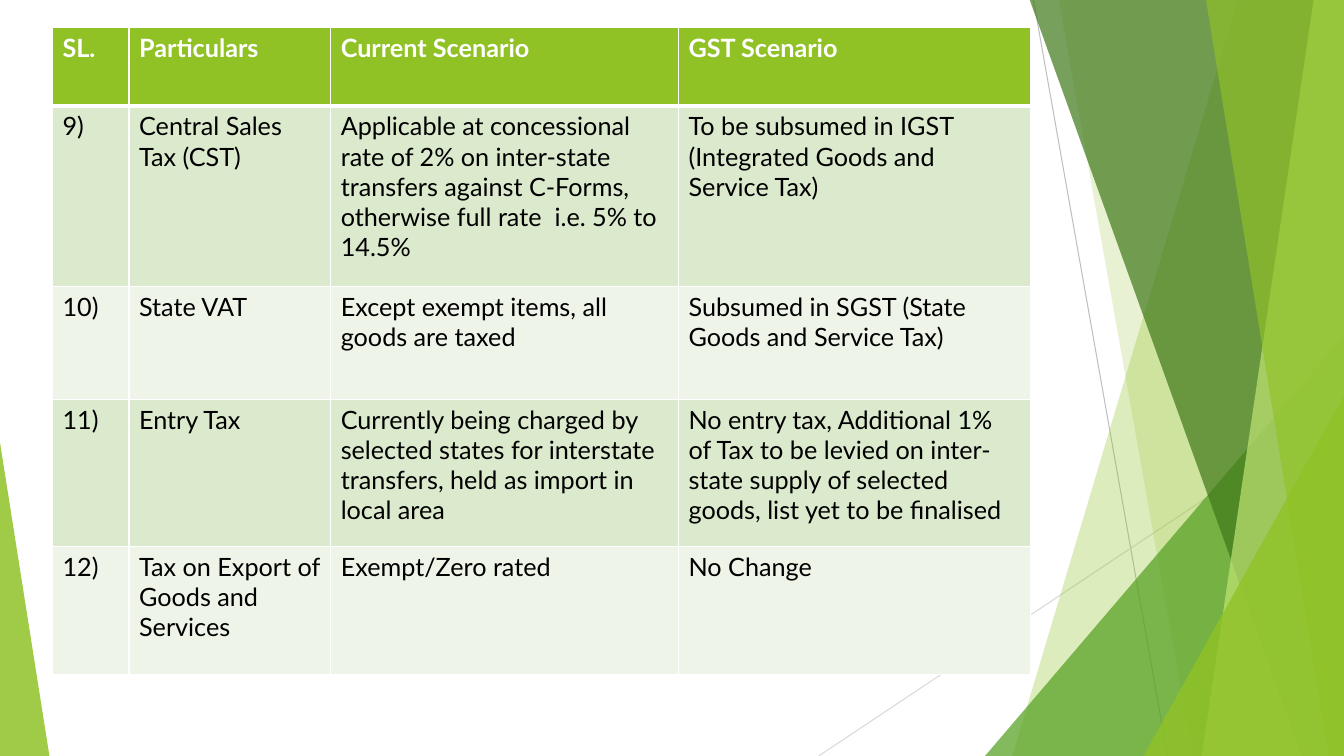
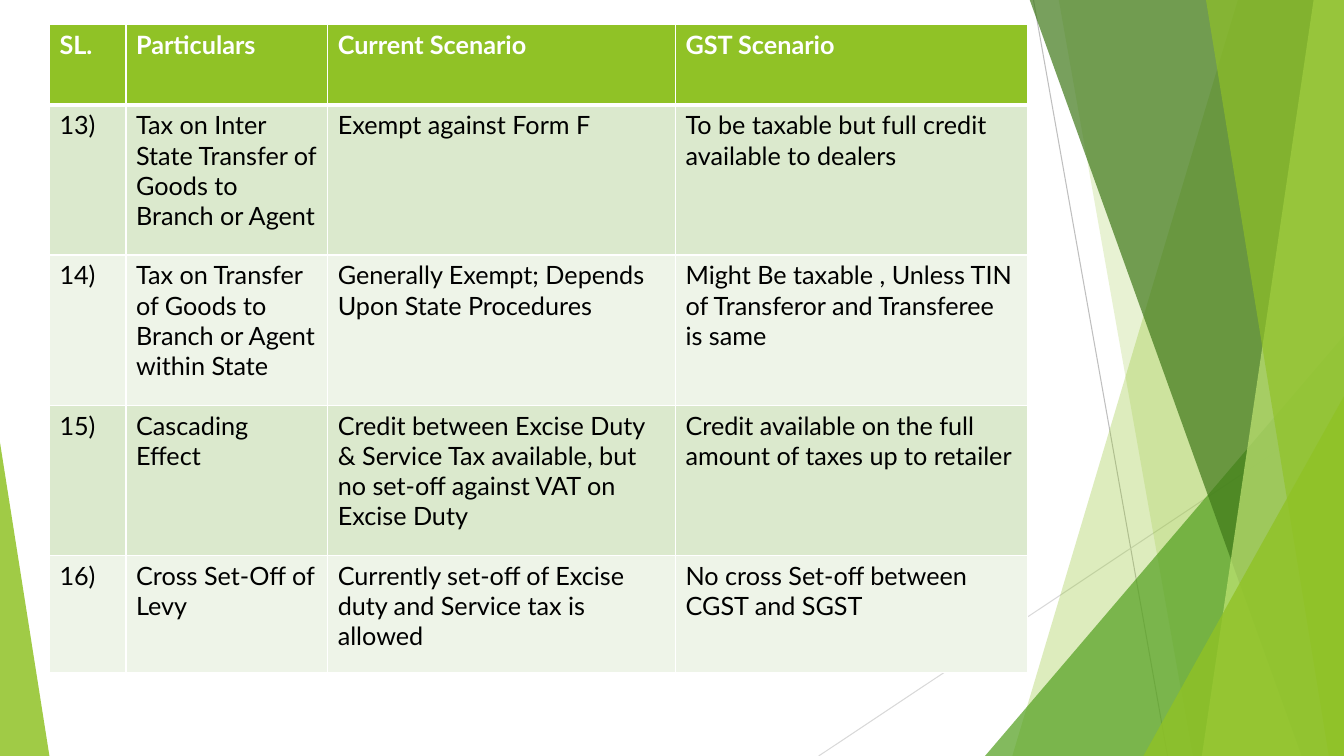
from dataclasses import dataclass

import lxml.etree
import pptx
import pptx.dml.color
import pptx.enum.shapes
import pptx.oxml.ns
import pptx.util

Inches = pptx.util.Inches
qn = pptx.oxml.ns.qn


@dataclass(frozen=True)
class Theme:
    font: str = "Lato"
    text_size: int = 18
    white: str = "FFFFFF"
    text: str = "000000"
    lime: str = "90C226"
    pale_lime: str = "C0E474"
    green: str = "54A021"
    dark_green: str = "3F7819"
    odd_row: str = "DBE9CD"
    even_row: str = "EEF4E8"
    steep_line: str = "BFBFBF"
    flat_line: str = "D9D9D9"
    hairline: float = 0.75
    grid_line: float = 1
    header_rule: float = 3


THEME = Theme()
WIDTH, HEIGHT = 13.33, 7.5
BLEED = -0.01  # bands start just above the slide's top edge

HEADINGS = ["SL.", "Particulars", "Current Scenario", "GST Scenario"]
COLUMN_WIDTHS = [0.76, 2, 3.45, 3.49]

# Per slide: table corner, row heights, rows below the headings
TAX_TABLES = [
    ((0.52, 0.27), [0.78, 1.79, 1.12, 1.46, 1.27], [
        ["9)", "Central Sales Tax (CST)",
         "Applicable at concessional rate of 2% on inter-state transfers "
         "against C-Forms, otherwise full rate  i.e. 5% to 14.5%",
         "To be subsumed in IGST (Integrated Goods and Service Tax)"],
        ["10)", "State VAT", "Except exempt items, all goods are taxed",
         "Subsumed in SGST (State Goods and Service Tax)"],
        ["11)", "Entry Tax",
         "Currently being charged by selected states for interstate "
         "transfers, held as import in local area",
         "No entry tax, Additional 1% of Tax to be levied on inter-state "
         "supply of selected goods, list yet to be finalised"],
        ["12)", "Tax on Export of Goods and Services",
         "Exempt/Zero rated", "No Change"],
    ]),
    ((0.49, 0.24), [0.8, 1.49, 1.49, 1.49, 1.16], [
        ["13)", "Tax on Inter State Transfer of Goods to Branch or Agent",
         "Exempt against Form F",
         "To be taxable but full credit available to dealers"],
        ["14)", "Tax on Transfer of Goods to Branch or Agent within State",
         "Generally Exempt; Depends Upon State Procedures",
         "Might Be taxable , Unless TIN of Transferor and Transferee is same"],
        ["15)", "Cascading Effect",
         "Credit between Excise Duty & Service Tax available, but no set-off "
         "against VAT on Excise Duty",
         "Credit available on the full amount of taxes up to retailer"],
        ["16)", "Cross Set-Off of Levy",
         "Currently set-off of Excise duty and Service tax is allowed",
         "No cross Set-off between CGST and SGST"],
    ]),
]


def rgb(color):
    return pptx.dml.color.RGBColor.from_string(color)


def write_text(frame, text, *, color=THEME.text, bold=False,
               size=THEME.text_size):
    frame.word_wrap = True
    run = frame.paragraphs[0].add_run()
    run.text = text
    run.font.name = THEME.font
    run.font.size = pptx.util.Pt(size)
    run.font.bold = bold
    run.font.color.rgb = rgb(color)


# Background decoration

def paint(shape, color, opacity):
    """Give a shape a see-through fill with no outline or shadow."""
    shape.shadow.inherit = False
    shape.line.fill.background()
    shape.fill.solid()
    shape.fill.fore_color.rgb = rgb(color)
    tint = shape.fill._xPr.find(qn("a:solidFill"))[0]
    lxml.etree.SubElement(tint, qn("a:alpha"), val=str(opacity * 1000))


def add_hairline(slide, start, end, color):
    line = slide.shapes.add_connector(
        pptx.enum.shapes.MSO_CONNECTOR.STRAIGHT,
        *(Inches(value) for value in (*start, *end)))
    line.line.color.rgb = rgb(color)
    line.line.width = pptx.util.Pt(THEME.hairline)
    lxml.etree.SubElement(line._element.spPr, qn("a:effectLst"))


def add_band(slide, top_x, bottom_x, color, opacity):
    """Fill from a slanted left edge to the slide's right edge."""
    outline = slide.shapes.build_freeform(Inches(top_x), Inches(BLEED))
    corners = [(WIDTH, BLEED), (WIDTH, HEIGHT), (bottom_x, HEIGHT)]
    outline.add_line_segments([(Inches(x), Inches(y)) for x, y in corners])
    paint(outline.convert_to_shape(), color, opacity)


def add_corner(slide, left, top, width, apex, color, opacity):
    """Place a right triangle on the slide's bottom edge."""
    corner = slide.shapes.add_shape(
        pptx.enum.shapes.MSO_SHAPE.ISOSCELES_TRIANGLE, Inches(left),
        Inches(top), Inches(width), Inches(HEIGHT - top))
    corner.adjustments[0] = apex
    paint(corner, color, opacity)


def add_decoration(slide):
    add_hairline(slide, (10.25, 0), (11.58, HEIGHT), THEME.steep_line)
    add_hairline(slide, (WIDTH, 4.03), (8.12, HEIGHT), THEME.flat_line)
    add_band(slide, 12.28, 10.04, THEME.lime, 30)
    add_band(slide, 10.5, 11.83, THEME.lime, 20)
    add_corner(slide, 9.77, 3.33, 3.56, 1, THEME.green, 72)
    add_band(slide, 10.21, 12.91, THEME.dark_green, 70)
    add_band(slide, 13.03, 11.92, THEME.pale_lime, 70)
    add_band(slide, 11.96, 13.18, THEME.lime, 65)
    add_corner(slide, 11.34, 3.93, 1.99, 1, THEME.lime, 80)
    add_corner(slide, 0, 4.39, 0.49, 0, THEME.lime, 85)


# Tax comparison table

def set_borders(cell, top, bottom):
    properties = cell._tc.get_or_add_tcPr()
    sides = {"L": THEME.grid_line, "R": THEME.grid_line,
             "T": top, "B": bottom}
    for side, points in sides.items():
        border = lxml.etree.SubElement(properties, qn(f"a:ln{side}"),
                                       w=str(pptx.util.Pt(points)))
        fill = lxml.etree.SubElement(border, qn("a:solidFill"))
        lxml.etree.SubElement(fill, qn("a:srgbClr"), val=THEME.white)


def format_cell(cell, text, row):
    is_header = row == 0
    set_borders(cell,
                top=THEME.header_rule if row == 1 else THEME.grid_line,
                bottom=THEME.header_rule if is_header else THEME.grid_line)
    stripe = THEME.odd_row if row % 2 else THEME.even_row
    cell.fill.solid()
    cell.fill.fore_color.rgb = rgb(THEME.lime if is_header else stripe)
    write_text(cell.text_frame, text, bold=is_header,
               color=THEME.white if is_header else THEME.text)


def add_tax_table(slide, corner, row_heights, entries):
    left, top = corner
    comparison = slide.shapes.add_table(
        len(row_heights), len(COLUMN_WIDTHS), Inches(left), Inches(top),
        Inches(sum(COLUMN_WIDTHS)), Inches(sum(row_heights))).table
    for column, width in zip(comparison.columns, COLUMN_WIDTHS):
        column.width = Inches(width)
    for row, height in zip(comparison.rows, row_heights):
        row.height = Inches(height)
    for r, texts in enumerate([HEADINGS, *entries]):
        for c, text in enumerate(texts):
            format_cell(comparison.cell(r, c), text, r)


def main():
    deck = pptx.Presentation()
    deck.slide_width, deck.slide_height = Inches(WIDTH), Inches(HEIGHT)
    for corner, row_heights, entries in TAX_TABLES:
        slide = deck.slides.add_slide(deck.slide_layouts[6])
        add_decoration(slide)
        add_tax_table(slide, corner, row_heights, entries)
    deck.save("out.pptx")


if __name__ == "__main__":
    main()
